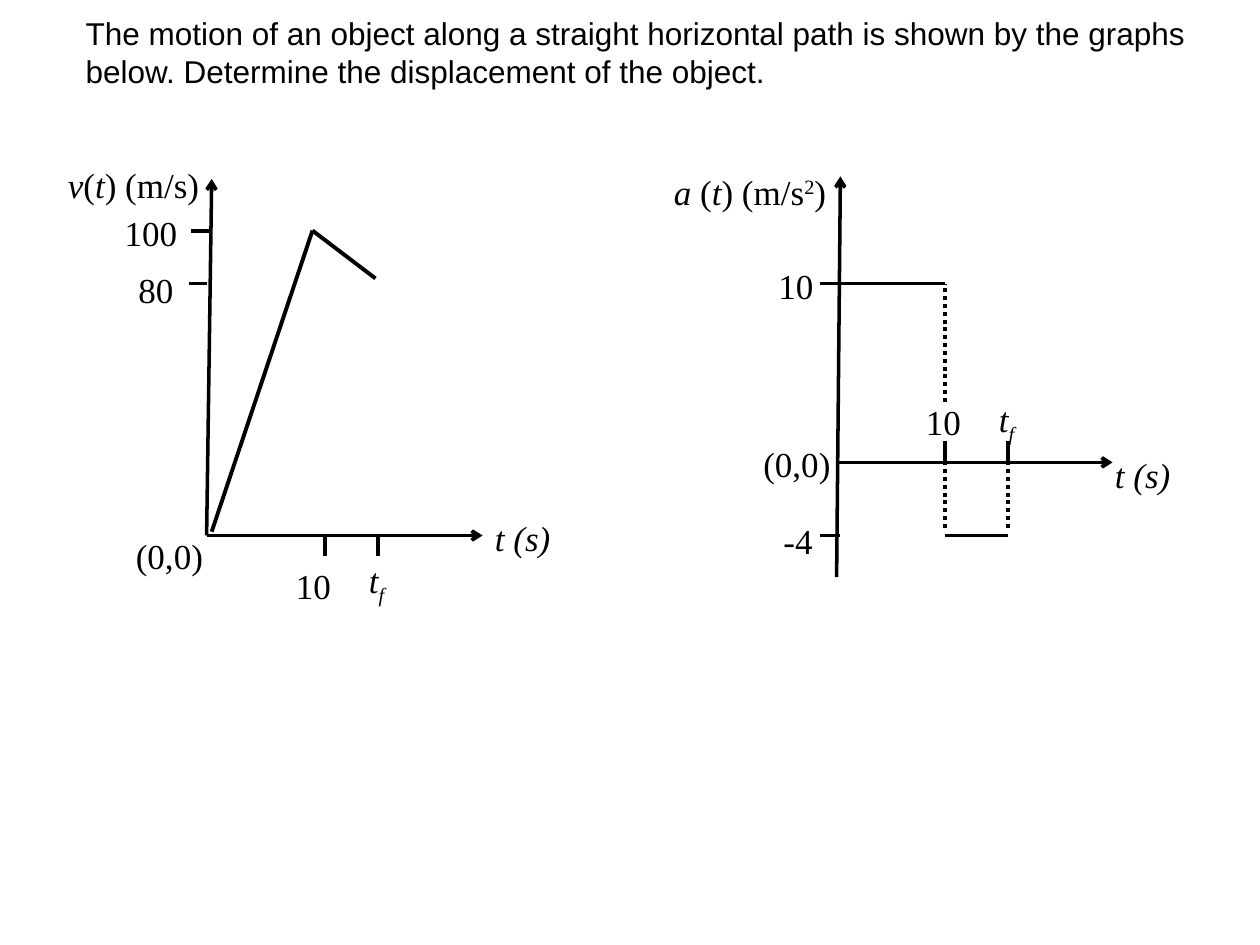
import pptx
import pptx.util
import pptx.dml.color
import pptx.enum.dml
import pptx.enum.shapes
import pptx.enum.text
import pptx.oxml.ns
from lxml import etree

Inches = pptx.util.Inches
Pt = pptx.util.Pt
qn = pptx.oxml.ns.qn
BLACK = pptx.dml.color.RGBColor(0, 0, 0)
DOTTED = pptx.enum.dml.MSO_LINE.ROUND_DOT

# Label runs: (text, italic, baseline shift in thousandths of a percent)
TIME_LABEL = [("t (s)", True, 0)]
FINAL_TIME_LABEL = [("t", True, 0), ("f", True, -25000)]
VELOCITY_LABEL = [("v", True, 0), ("(", False, 0), ("t", True, 0),
                  (") (m/s)", False, 0)]
ACCELERATION_LABEL = [("a ", True, 0), ("(", False, 0), ("t", True, 0),
                      (") (m/s", False, 0), ("2", False, 30000),
                      (")", False, 0)]


def plain(text):
    return [(text, False, 0)]


def add_line(slide, box, start, end, width=2.25, dash=None, arrow=False):
    """Draw a line between two points measured from the box's corner."""
    left, top = box
    connector = slide.shapes.add_connector(
        pptx.enum.shapes.MSO_CONNECTOR.STRAIGHT,
        left + Inches(start[0]), top + Inches(start[1]),
        left + Inches(end[0]), top + Inches(end[1]))
    connector.line.color.rgb = BLACK
    connector.line.width = Pt(width)
    if dash is not None:
        connector.line.dash_style = dash
    if arrow:
        etree.SubElement(connector.line._get_or_add_ln(), qn("a:tailEnd"),
                         type="arrow")
    etree.SubElement(connector._element.spPr, qn("a:effectLst"))


def add_label(slide, box, runs, x, y, width, height=0.55):
    left, top = box
    label = slide.shapes.add_textbox(left + Inches(x), top + Inches(y),
                                     Inches(width), Inches(height))
    label.text_frame.word_wrap = True
    paragraph = label.text_frame.paragraphs[0]
    paragraph.line_spacing = 1.15
    paragraph.space_after = Pt(10)
    for text, italic, baseline in runs:
        run = paragraph.add_run()
        run.text = text
        run.font.name = "Times New Roman"
        run.font.size = Pt(20)
        run.font.color.rgb = BLACK
        run.font.italic = italic
        if baseline:
            run.font._element.set("baseline", str(baseline))


def add_question(slide, left, top, width, height):
    title = slide.shapes.title
    title.left, title.top, title.width, title.height = left, top, width, height
    frame = title.text_frame
    frame.text = ("The motion of an object along a straight horizontal path is "
                  "shown by the graphs below. Determine the displacement of "
                  "the object.")
    frame.word_wrap = True
    frame.auto_size = pptx.enum.text.MSO_AUTO_SIZE.SHAPE_TO_FIT_TEXT
    frame.vertical_anchor = pptx.enum.text.MSO_ANCHOR.TOP
    paragraph = frame.paragraphs[0]
    paragraph.alignment = pptx.enum.text.PP_ALIGN.LEFT
    paragraph.font.name = "Arial"
    paragraph.font.size = Pt(18)
    paragraph.font.color.rgb = BLACK


def add_velocity_graph(slide, left, top):
    box = (left, top)
    # Axes
    origin = (1.24, 3.05)
    add_line(slide, box, origin, (1.28, 0.22), width=2, arrow=True)
    add_line(slide, box, origin, (3.43, 3.05), width=2, arrow=True)
    # Ticks on the time and velocity axes
    for x in (2.18, 2.6):
        add_line(slide, box, (x, 3.21), (x, 3.05))
    for x, y in ((1.12, 0.63), (1.1, 1.05)):
        add_line(slide, box, (x, y), (x + 0.14, y))
    # Velocity curve
    peak = (2.08, 0.63)
    add_line(slide, box, (1.28, 3.02), peak)
    add_line(slide, box, peak, (2.58, 1.01))
    # Labels
    add_label(slide, box, VELOCITY_LABEL, 0.04, 0, 1.47)
    add_label(slide, box, plain("100"), 0.49, 0.38, 0.78)
    add_label(slide, box, plain("80"), 0.6, 0.83, 0.64)
    add_label(slide, box, plain("(0,0)"), 0.58, 2.94, 0.93)
    add_label(slide, box, plain("10"), 1.85, 3.18, 0.67)
    add_label(slide, box, FINAL_TIME_LABEL, 2.43, 3.13, 0.59)
    add_label(slide, box, TIME_LABEL, 3.43, 2.8, 0.75)


def add_acceleration_graph(slide, left, top):
    box = (left, top)
    change_x, final_x = 2.3, 2.8
    high_y, axis_y, low_y = 1.05, 2.47, 3.05
    # Axes
    add_line(slide, box, (1.44, 3.38), (1.47, 0.2), width=2, arrow=True)
    add_line(slide, box, (1.44, axis_y), (3.63, axis_y), width=2, arrow=True)
    # Ticks, with dotted drops to the lower level
    for x in (change_x, final_x):
        add_line(slide, box, (x, 2.49), (x, 2.3))
        add_line(slide, box, (x, 2.99), (x, 2.38), dash=DOTTED)
    for y in (high_y, low_y):
        add_line(slide, box, (1.31, y), (1.47, y))
    # Acceleration levels
    add_line(slide, box, (1.47, high_y), (change_x, high_y))
    add_line(slide, box, (change_x, 1.99), (change_x, high_y), dash=DOTTED)
    add_line(slide, box, (change_x, low_y), (final_x, low_y))
    # Labels
    add_label(slide, box, ACCELERATION_LABEL, 0.05, 0.05, 1.77)
    add_label(slide, box, plain("10"), 0.88, 0.8, 0.63)
    add_label(slide, box, plain("(0,0)"), 0.76, 2.21, 1.04)
    add_label(slide, box, plain("-4"), 0.92, 2.82, 0.63)
    add_label(slide, box, plain("10"), 2.05, 1.88, 0.67)
    add_label(slide, box, FINAL_TIME_LABEL, 2.63, 1.85, 0.5)
    add_label(slide, box, TIME_LABEL, 3.55, 2.3, 0.75)


def main():
    presentation = pptx.Presentation()
    presentation.slide_width = Inches(10)
    presentation.slide_height = Inches(7.5)
    slide = presentation.slides.add_slide(presentation.slide_layouts[5])
    add_question(slide, Inches(0.58), Inches(0.06), Inches(9.08), Inches(0.71))
    add_velocity_graph(slide, Inches(0.4), Inches(1.2))
    add_acceleration_graph(slide, Inches(5.2), Inches(1.2))
    presentation.save("out.pptx")


if __name__ == "__main__":
    main()
